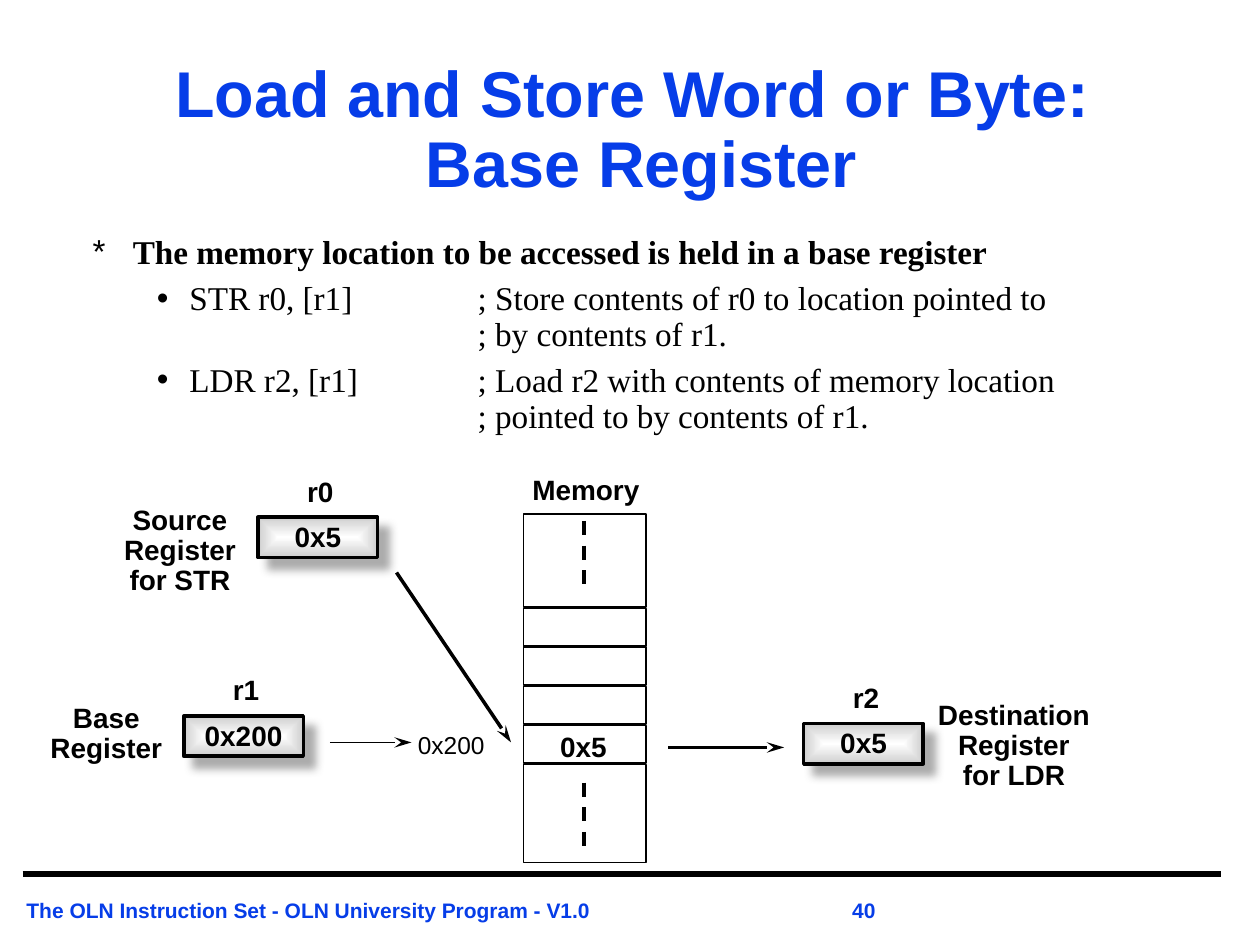
"""Builds the slide on loading and storing through a base register."""
from lxml import etree
from pptx import Presentation
from pptx.dml.color import RGBColor
from pptx.enum.dml import MSO_LINE
from pptx.enum.shapes import MSO_CONNECTOR, MSO_SHAPE
from pptx.enum.text import MSO_ANCHOR, PP_ALIGN
from pptx.oxml.ns import qn
from pptx.util import Inches, Pt

BLUE = RGBColor(0x06, 0x3D, 0xE8)
BLACK = RGBColor(0, 0, 0)
WHITE = RGBColor(0xFF, 0xFF, 0xFF)
SILVER = RGBColor(0xCE, 0xCE, 0xCE)
SHADOW = RGBColor(0x91, 0x91, 0x91)
SANS, SERIF = "Arial", "Times New Roman"
COLUMNS, ROWS = 100.1, 75.1
CELL = Inches(0.1)


def grid(*cells):
    return [round(count * CELL) for count in cells]


def add(parent, tag, **attributes):
    return etree.SubElement(parent, qn(tag), attributes)


class Board:
    """Holds the current slide and draws styled elements on its grid."""

    def __init__(self, slide):
        self.slide = slide

    def frame(self, left, top, width, height, anchor=MSO_ANCHOR.TOP):
        frame = self.slide.shapes.add_textbox(*grid(left, top, width, height)).text_frame
        frame.word_wrap = True
        frame.vertical_anchor = anchor
        return frame

    def style(self, paragraph, size, bold, color=BLACK, font=SANS):
        paragraph.line_spacing = 0.9
        for run in paragraph.runs:
            run.font.size, run.font.bold = Pt(size), bold
            run.font.name, run.font.color.rgb = font, color

    def label(self, text, left, top, width, height=3.4, size=16, bold=True,
              color=BLACK, anchor=MSO_ANCHOR.TOP):
        caption = self.frame(left, top, width, height, anchor).paragraphs[0]
        caption.text = text
        caption.alignment = PP_ALIGN.CENTER
        self.style(caption, size, bold, color)

    def bullets(self, items, left, top, width, height):
        frame = self.frame(left, top, width, height)
        for number, (text, level, mark, margin, hanging) in enumerate(items):
            item = frame.add_paragraph() if number else frame.paragraphs[0]
            item.text = text
            item.level = level
            properties = item._p.get_or_add_pPr()
            properties.set("marL", str(Inches(margin)))
            properties.set("indent", str(-Inches(hanging)))
            properties.set("defTabSz", str(Inches(1.02)))
            add(properties, "a:buFont", typeface=SANS)
            add(properties, "a:buChar", char=mark)
            if number:
                item.space_before = Pt(5.7)
            self.style(item, 19, level == 0, font=SERIF)

    def footer(self, text, left, top, width, height, tab):
        note = self.frame(left, top, width, height)
        note.margin_left = note.margin_right = Inches(0.07)
        note.margin_top = note.margin_bottom = Inches(0.03)
        line = note.paragraphs[0]
        line.text = text
        stops = add(line._p.get_or_add_pPr(), "a:tabLst")
        add(stops, "a:tab", pos=str(Inches(tab)), algn="l")
        self.style(line, 12, True, BLUE)
        line.line_spacing = 1.18

    def box(self, left, top, width, height, weight=1):
        box = self.slide.shapes.add_shape(MSO_SHAPE.RECTANGLE, *grid(left, top, width, height))
        box.shadow.inherit = False
        box.fill.background()
        box.line.color.rgb, box.line.width = BLACK, Pt(weight)
        return box

    def register(self, name, value, left, top):
        body = self.box(left, top, 9.5, 3.2, 2)
        body.fill.gradient()
        for stop, color, position in zip(body.fill.gradient_stops, (WHITE, SILVER), (0, 1)):
            stop.color.rgb, stop.position = color, position
        properties = body._element.spPr
        gradient = properties.find(qn("a:gradFill"))
        gradient.remove(gradient.find(qn("a:lin")))
        path = add(gradient, "a:path", path="shape")
        add(path, "a:fillToRect", l="50000", t="50000", r="50000", b="50000")
        shadow = add(properties.find(qn("a:effectLst")), "a:outerShdw",
                     blurRad=str(Pt(5)), dist=str(Pt(8.5)), dir="2700000")
        add(add(shadow, "a:srgbClr", val=str(SHADOW)), "a:alpha", val="75000")
        self.label(name, left - 0.9, top - 3.6, 11.7)
        self.label(value, left - 0.1, top, 9.7)

    def line(self, start, end, weight, arrow=False, dashed=False):
        line = self.slide.shapes.add_connector(MSO_CONNECTOR.STRAIGHT, *grid(*start, *end))
        line.line.color.rgb, line.line.width = BLACK, Pt(weight)
        if dashed:
            line.line.dash_style = MSO_LINE.DASH
        if arrow:
            add(line.line._get_or_add_ln(), "a:tailEnd", type="stealth", len="lg")
        add(line._element.spPr, "a:effectLst")


def main():
    deck = Presentation()
    deck.slide_width, deck.slide_height = grid(COLUMNS, ROWS)
    board = Board(deck.slides.add_slide(deck.slide_layouts[6]))

    board.line((1.8, 69.45), (97, 69.45), 3.75)
    board.footer("The OLN Instruction Set - OLN University Program - V1.0\t40",
                 1.4, 70.7, 98.5, 2.9, 6.56)
    board.label("Load and Store Word or Byte:\v Base Register", 10.6, 4, 79.3, 12.9,
                37, color=BLUE, anchor=MSO_ANCHOR.MIDDLE)
    board.bullets([
        ("The memory location to be accessed is held in a base register", 0, "*", 0.32, 0.32),
        ("STR r0, [r1]\t; Store contents of r0 to location pointed to"
         "\v\t\t\t; by contents of r1.", 1, "•", 0.77, 0.26),
        ("LDR r2, [r1]\t; Load r2 with contents of memory location"
         "\v\t\t\t; pointed to by contents of r1.", 1, "•", 0.77, 0.26),
    ], 6.37, 18.27, 87.7, 18)

    board.label("Memory", 40.7, 37.4, 11.7)
    board.box(41.6, 40.85, 9.7, 7.4)
    for word in range(4):
        board.box(41.6, 48.35 + 3.1 * word, 9.7, 3)
    board.box(41.6, 60.75, 9.7, 7.8)
    for top in (41.4, 62.2):
        board.line((46.4, top), (46.4, top + 5.6), 2, dashed=True)
    board.label("0x5", 41.5, 57.8, 9.7)
    board.label("0x200", 31, 57.8, 9.7, size=14, bold=False)

    board.register("r0", "0x5", 20.5, 41.1)
    board.register("r1", "0x200", 14.6, 56.9)
    board.register("r2", "0x5", 63.85, 57.5)
    board.label("Source\vRegister\vfor STR", 8.45, 39.75, 11.7, 8.2)
    board.label("Base\vRegister", 2.6, 55.5, 11.7, 5.8)
    board.label("Destination\vRegister\vfor LDR", 73.5, 55.25, 14.1, 8.2)

    board.line((31.5, 45.5), (40.6, 59), 2, arrow=True)
    board.line((26.2, 59), (32.7, 59), 1, arrow=True)
    board.line((53.1, 59.4), (62.3, 59.4), 2, arrow=True)

    deck.save("out.pptx")


if __name__ == "__main__":
    main()
